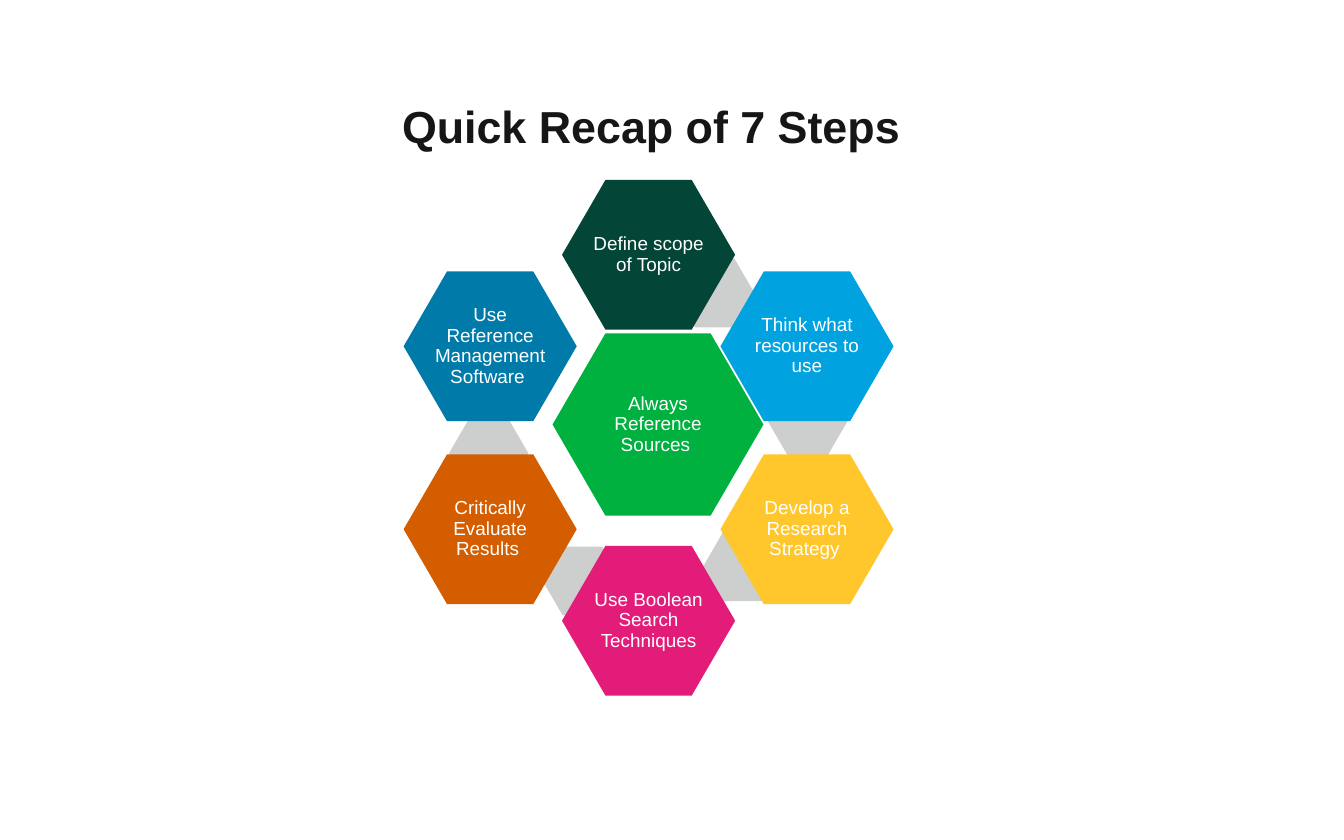
"""Build the slide that recaps the seven research steps as a ring of hexagons."""
import math
from dataclasses import dataclass

from pptx import Presentation
from pptx.dml.color import RGBColor
from pptx.enum.shapes import MSO_SHAPE
from pptx.enum.text import MSO_ANCHOR, PP_ALIGN
from pptx.util import Inches, Pt

HEXAGON = MSO_SHAPE.HEXAGON
MIDDLE = MSO_ANCHOR.MIDDLE
CENTER = PP_ALIGN.CENTER


@dataclass(frozen=True)
class Theme:
    font: str = "Arial"
    title_size: float = 42.7
    step_size: float = 18
    title_color: str = "171616"
    step_text: str = "FFFFFF"
    link: str = "CCCFCE"
    core: str = "00B140"


@dataclass(frozen=True)
class Step:
    label: str
    fill: str
    link_corner: tuple[float, float] | None = None


THEME = Theme()
RING_CENTER = (8.58, 5.79)
RING_RADIUS = 2.42
STEP_SIZE = (2.29, 1.98)
LINK_SIZE = (1.05, 0.91)
CORE_CORNER = (7.31, 4.41)
CORE_SIZE = (2.79, 2.41)
STEPS = [
    Step("Define scope of Topic", "034638", (8.93, 3.42)),
    Step("Think what resources to use", "00A3E0", (10.16, 5.12)),
    Step("Develop a Research Strategy ", "FFC72C", (9.3, 7.04)),
    Step("Use Boolean Search Techniques", "E31C79", (7.18, 7.23)),
    Step("Critically Evaluate Results ", "D45D00", (5.94, 5.54)),
    Step("Use Reference Management Software ", "007AA8"),
]


def add_hexagon(slide, corner: tuple[float, float], size: tuple[float, float],
                fill: str, label: str = "") -> None:
    """Draw a borderless hexagon with an optional centred label."""
    hexagon = slide.shapes.add_shape(HEXAGON, *map(Inches, corner + size))
    hexagon.adjustments[0] = 0.29
    hexagon.shadow.inherit = False
    hexagon.fill.solid()
    hexagon.fill.fore_color.rgb = RGBColor.from_string(fill)
    hexagon.line.fill.background()
    if not label:
        return
    frame = hexagon.text_frame
    frame.word_wrap = True
    frame.vertical_anchor = MIDDLE
    frame.margin_left = frame.margin_right = Inches(0.03)
    frame.margin_top = frame.margin_bottom = Inches(0.03)
    paragraph = frame.paragraphs[0]
    paragraph.text = label
    paragraph.alignment = CENTER
    paragraph.line_spacing = 0.9
    paragraph.font.name = THEME.font
    paragraph.font.size = Pt(THEME.step_size)
    paragraph.font.color.rgb = RGBColor.from_string(THEME.step_text)


def add_title(slide, title: str) -> None:
    """Write the slide title."""
    box = slide.shapes.add_textbox(Inches(5.22), Inches(1.25), Inches(8.24), Inches(0.82))
    box.text_frame.word_wrap = True
    paragraph = box.text_frame.paragraphs[0]
    paragraph.text = title
    paragraph.font.name = THEME.font
    paragraph.font.size = Pt(THEME.title_size)
    paragraph.font.bold = True
    paragraph.font.color.rgb = RGBColor.from_string(THEME.title_color)


def ring_corner(index: int) -> tuple[float, float]:
    """Return the top left corner of a step, clockwise from the top."""
    angle = math.tau * index / len(STEPS)
    return (RING_CENTER[0] + RING_RADIUS * math.sin(angle) - STEP_SIZE[0] / 2,
            RING_CENTER[1] - RING_RADIUS * math.cos(angle) - STEP_SIZE[1] / 2)


def main() -> None:
    """Build and save the presentation."""
    deck = Presentation()
    deck.slide_width, deck.slide_height = Inches(17.78), Inches(11.11)
    slide = deck.slides.add_slide(deck.slide_layouts[6])
    add_hexagon(slide, CORE_CORNER, CORE_SIZE, THEME.core, "Always Reference Sources ")
    for index, step in enumerate(STEPS):
        if step.link_corner:
            add_hexagon(slide, step.link_corner, LINK_SIZE, THEME.link)
        add_hexagon(slide, ring_corner(index), STEP_SIZE, step.fill, step.label)
    add_title(slide, "Quick Recap of 7 Steps")
    deck.save("out.pptx")


if __name__ == "__main__":
    main()
